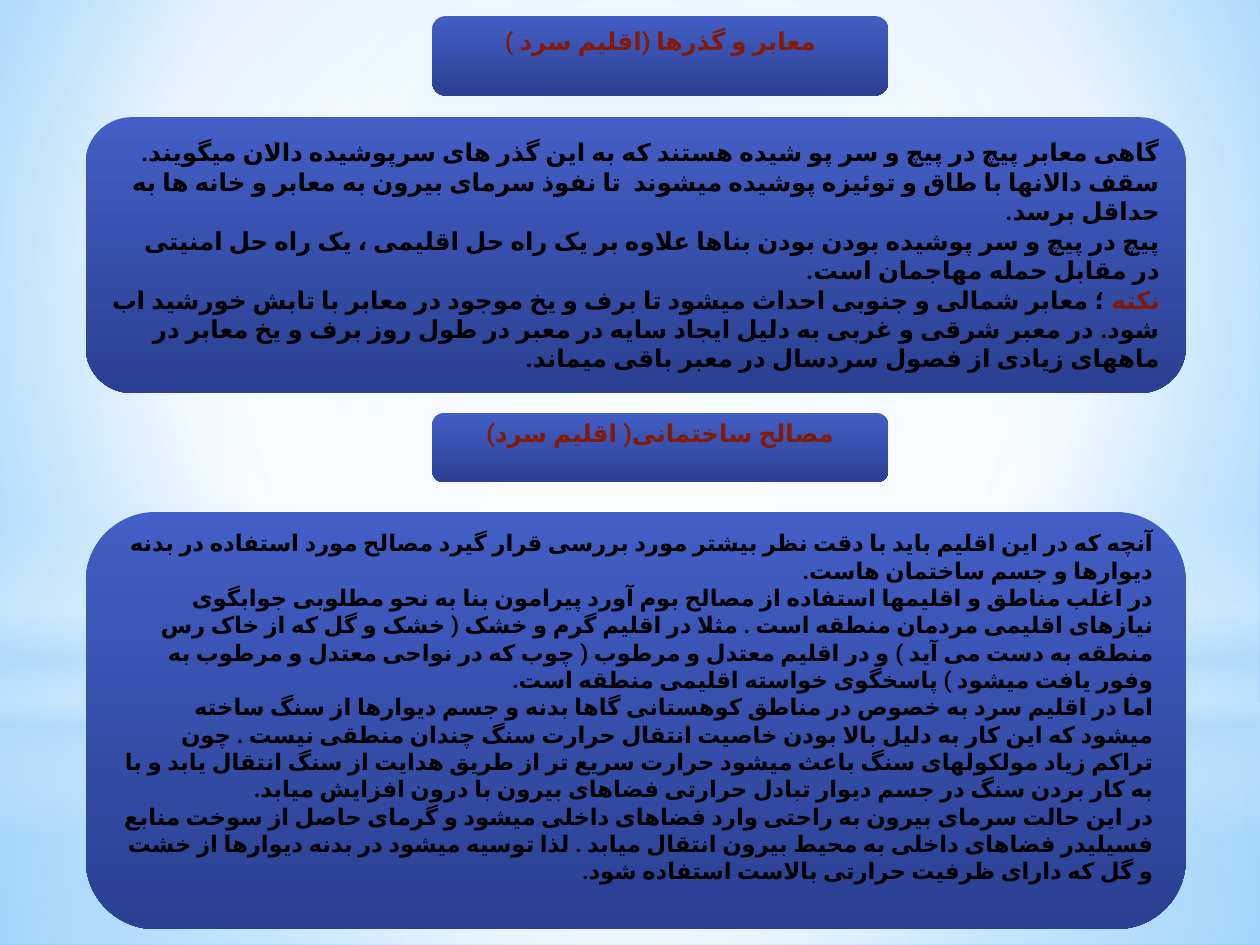
from lxml import etree
from pptx import Presentation
from pptx.dml.color import RGBColor
from pptx.enum import shapes, text
from pptx.oxml.ns import qn
from pptx.util import Pt

THEME = {
    "font": "Roboto", "ink": "000000", "accent": "821A08",
    "heading_size": 14, "streets_size": 14, "materials_size": 13,
    "panel": [(0, "435EC5", 100), (100, "2B4092", 100)],
    "sky": [(0, "9ED5FF", 100), (60, "FFFFFF", 100), (100, "5BB9FF", 100)],
}
LANGUAGE = "fa-IR"

# Content: each paragraph is a list of (text, colour name) runs
STREETS_TITLE = [[("معابر و گذرها (اقلیم سرد )", "accent")]]
MATERIALS_TITLE = [[("مصالح ساختمانی( اقلیم سرد)", "accent")]]
STREETS = [
    [("گاهی معابر پیچ در پیچ و سر پو شیده هستند که به این گذر های سرپوشیده دالان میگویند. سقف دالانها با طاق و توئیزه پوشیده میشوند  تا نفوذ سرمای بیرون به معابر و خانه ها به  حداقل برسد.", "ink")],
    [("پیچ در پیچ و سر پوشیده بودن بودن بناها علاوه بر یک راه حل اقلیمی ، یک راه حل امنیتی در مقابل حمله مهاجمان است.", "ink")],
    [("نکته", "accent"),
     (" ؛ معابر شمالی و جنوبی احداث میشود تا برف و یخ موجود در معابر با تابش خورشید اب شود. در معبر شرقی و غربی به دلیل ایجاد سایه در معبر در طول روز برف و یخ معابر در ماههای زیادی از فصول سردسال در معبر باقی میماند.", "ink")],
]
MATERIALS = [
    [("آنچه که در این اقلیم باید با دقت نظر بیشتر مورد بررسی قرار گیرد مصالح مورد استفاده در بدنه دیوارها و جسم ساختمان هاست.", "ink")],
    [("در اغلب مناطق و اقلیمها استفاده از مصالح بوم آورد پیرامون بنا به نحو مطلوبی جوابگوی نیازهای اقلیمی مردمان منطقه است . مثلا در اقلیم گرم و خشک ( خشک و گل که از خاک رس منطقه به دست می آید ) و در اقلیم معتدل و مرطوب ( چوب که در نواحی معتدل و مرطوب به وفور یافت میشود ) پاسخگوی خواسته اقلیمی منطقه است.", "ink")],
    [("اما در اقلیم سرد به خصوص در مناطق کوهستانی گاها بدنه و جسم دیوارها از سنگ ساخته میشود که این کار به دلیل بالا بودن خاصیت انتقال حرارت سنگ چندان منطقی نیست . چون تراکم زیاد مولکولهای سنگ باعث میشود حرارت سریع تر از طریق هدایت از سنگ انتقال یابد و با به کار بردن سنگ در جسم دیوار تبادل حرارتی فضاهای بیرون با درون افزایش میابد.", "ink")],
    [("در این حالت سرمای بیرون به راحتی وارد فضاهای داخلی میشود و گرمای حاصل از سوخت منابع فسیلیدر فضاهای داخلی به محیط بیرون انتقال میابد . لذا توسیه میشود در بدنه دیوارها از خشت و گل که دارای ظرفیت حرارتی بالاست استفاده شود.", "ink")],
]

# Layout: headings and bodies share one left edge and width each
WIDTH, HEIGHT = 720, 540
HEADING_X, HEADING_W = 247, 260.6
BODY_X, BODY_W = 49, 628.6
TITLE_Y, TITLE_H = 9.2, 45.4
INSET_X, INSET_Y = 7.2, 3.6
CENTRE = (50, 50, 50, 50)
RECT, OVAL = shapes.MSO_SHAPE.RECTANGLE, shapes.MSO_SHAPE.OVAL
ROUNDED = shapes.MSO_SHAPE.ROUNDED_RECTANGLE

# Backdrop glows: shape, top, height, stops (position, colour, opacity), focus
GLOWS = [
    (RECT, 401.8, 138.2, [(0, "FFFFFF", 91), (37, "FFFFFF", 76), (100, "B4DCFA", 79)], CENTRE),
    (RECT, 0, 401.8, [(0, "FFFFFF", 89), (48, "FFFFFF", 62), (100, "B4DCFA", 79)], CENTRE),
    (RECT, 296.6, 180, [(0, "FFFFFF", 0), (29, "FFFFFF", 30), (45, "B4DCFA", 40),
                        (55, "FFFFFF", 26), (65, "B4DCFA", 60), (100, "FFFFFF", 0)], None),
    (OVAL, 126, 401.8, [(0, "FFFFFF", 100), (56, "FFFFFF", 0)], CENTRE),
]


def set_gradient(fill, parent, stops, focus=None):
    """Circular gradient around a focus rectangle, else top to bottom."""
    fill.gradient()
    grad = parent.find(qn("a:gradFill"))
    for child in list(grad):
        grad.remove(child)
    stop_list = etree.SubElement(grad, qn("a:gsLst"))
    for position, colour, opacity in stops:
        gs = etree.SubElement(stop_list, qn("a:gs"), pos=str(position * 1000))
        clr = etree.SubElement(gs, qn("a:srgbClr"), val=colour)
        if opacity < 100:
            etree.SubElement(clr, qn("a:alpha"), val=str(opacity * 1000))
    if focus:
        circle = etree.SubElement(grad, qn("a:path"), path="circle")
        edges = {side: str(v * 1000) for side, v in zip("ltrb", focus)}
        etree.SubElement(circle, qn("a:fillToRect"), edges)
    else:
        etree.SubElement(grad, qn("a:lin"), ang="5400000", scaled="0")


def write(sp, paragraphs, size, align, lift=0):
    """Fill a panel with right-to-left text, raised by extra bottom inset."""
    tf = sp.text_frame
    tf.word_wrap = True
    tf.auto_size = text.MSO_AUTO_SIZE.NONE
    tf.vertical_anchor = text.MSO_ANCHOR.MIDDLE
    tf.margin_left = tf.margin_right = Pt(INSET_X)
    tf.margin_top, tf.margin_bottom = Pt(INSET_Y), Pt(INSET_Y + lift)
    for i, runs in enumerate(paragraphs):
        p = tf.add_paragraph() if i else tf.paragraphs[0]
        p.alignment = align
        p._p.get_or_add_pPr().set("rtl", "1")
        for words, colour in runs:
            r = p.add_run()
            r.text = words
            r.font.size, r.font.bold = Pt(size), True
            r.font.name = THEME["font"]
            r.font.color.rgb = RGBColor.from_string(THEME[colour])
            r._r.rPr.set("lang", LANGUAGE)
            etree.SubElement(r._r.rPr, qn("a:cs"), typeface=THEME["font"])


def add_shape(slide, kind, x, y, w, h, stops=THEME["panel"], focus=None):
    sp = slide.shapes.add_shape(kind, Pt(x), Pt(y), Pt(w), Pt(h))
    sp.shadow.inherit = False
    set_gradient(sp.fill, sp._element.spPr, stops, focus)
    sp.line.fill.background()
    return sp


def main():
    prs = Presentation()
    prs.slide_width, prs.slide_height = Pt(WIDTH), Pt(HEIGHT)
    slide = prs.slides.add_slide(prs.slide_layouts[5])

    # Sky background and glows
    fill = slide.background.fill
    bg = slide._element.cSld.find(qn("p:bg")).find(qn("p:bgPr"))
    set_gradient(fill, bg, THEME["sky"], (20, 10, 20, 60))
    for kind, y, h, stops, focus in GLOWS:
        add_shape(slide, kind, 0, y, WIDTH, h, stops, focus)

    # Title placeholder in front of its rounded panel
    add_shape(slide, ROUNDED, HEADING_X, TITLE_Y, HEADING_W, TITLE_H)
    title = slide.shapes.title
    title.left, title.top = Pt(HEADING_X), Pt(TITLE_Y)
    title.width, title.height = Pt(HEADING_W), Pt(TITLE_H)
    slide.shapes._spTree.append(title._element)

    # Second heading and the two bodies
    second = add_shape(slide, ROUNDED, HEADING_X, 236, HEADING_W, 39.6)
    streets = add_shape(slide, ROUNDED, BODY_X, 67, BODY_W, 157.6)
    materials = add_shape(slide, ROUNDED, BODY_X, 292.6, BODY_W, 238.3)

    # Text of all four panels
    centre, right = text.PP_ALIGN.CENTER, text.PP_ALIGN.RIGHT
    for sp, paragraphs, size, align, lift in [
        (title, STREETS_TITLE, "heading_size", centre, 17),
        (second, MATERIALS_TITLE, "heading_size", centre, 17),
        (streets, STREETS, "streets_size", right, 0),
        (materials, MATERIALS, "materials_size", right, 15.6),
    ]:
        write(sp, paragraphs, THEME[size], align, lift)

    prs.save("out.pptx")


if __name__ == "__main__":
    main()
